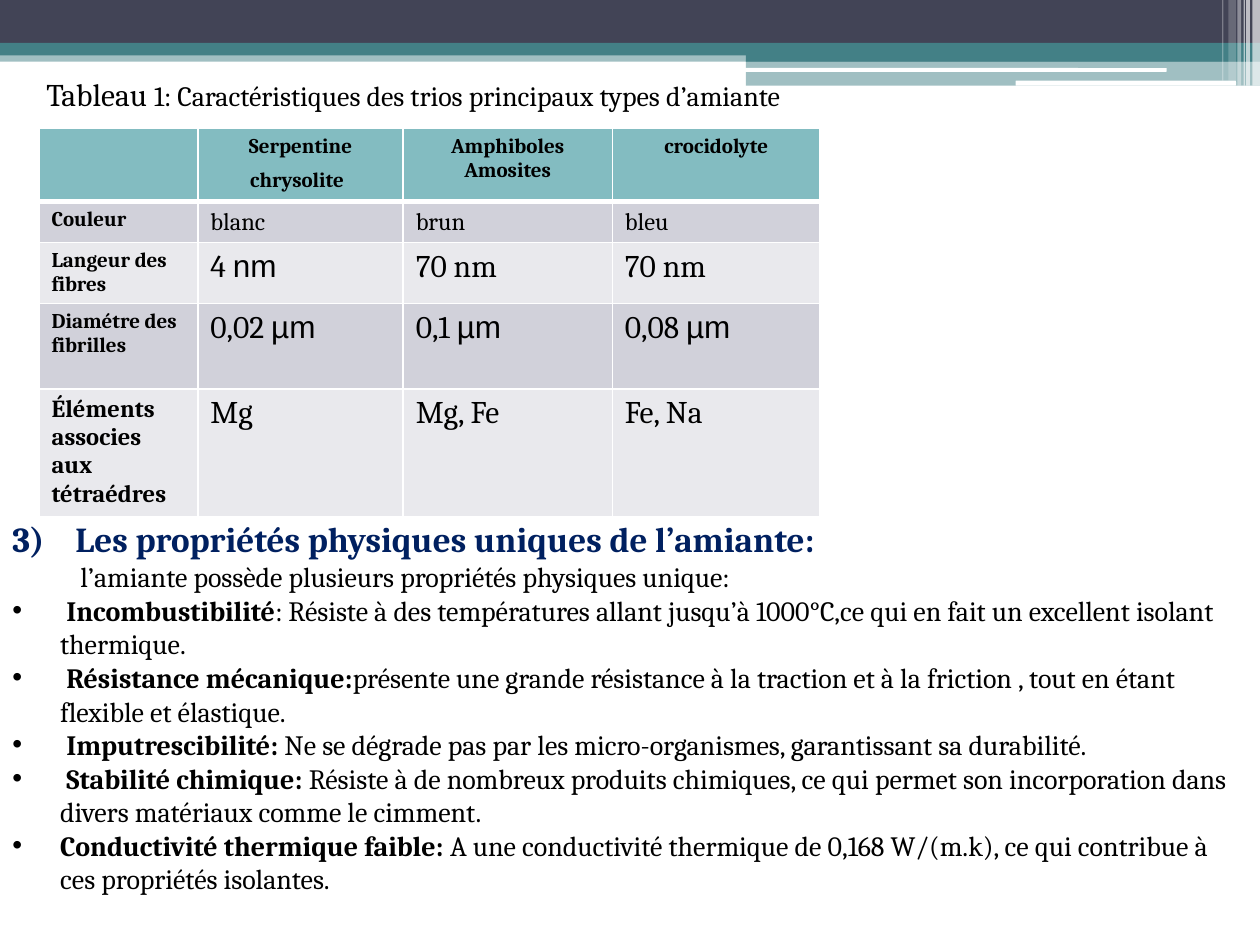
import pptx
import pptx.util
import pptx.dml.color
import pptx.enum.shapes
import pptx.enum.text
import pptx.oxml.ns
import lxml.etree

Inches, Pt = pptx.util.Inches, pptx.util.Pt
ALIGN = pptx.enum.text.PP_ALIGN
WHITE, BLACK, NAVY, SLATE, TEAL = "FFFFFF", "000000", "002060", "424456", "438086"
HEADER, BAND_DARK, BAND_LIGHT = "83BCC1", "D1D1DA", "E9E9ED"

BANNER = [
    (0, 0.4, 10, 0.09, TEAL, 50),
    (0, 0, 10, 0.34, SLATE, 100),
    (0, 0.34, 10, 0.1, TEAL, 100),
    (5.92, 0.39, 4.08, 0.1, TEAL, 100),
    (5.92, 0.48, 4.08, 0.2, TEAL, 50),
]
ROUNDED_LINES = [(5.91, 0.54, 3.35, 0.03, WHITE, 100), (8.06, 0.64, 1.75, 0.04, WHITE, 100)]
STRIPES = [
    (9.94, 0, 0.06, 0.68, WHITE, 65),
    (9.89, 0, 0.03, 0.68, WHITE, 65),
    (9.87, 0, 0.01, 0.68, WHITE, 60),
    (9.82, 0, 0.03, 0.68, WHITE, 40),
    (9.75, 0, 0.06, 0.64, WHITE, 20),
    (9.7, 0, 0.01, 0.64, WHITE, 30),
]

COLUMN_WIDTHS = [1.26, 1.63, 1.66, 1.65]
ROW_HEIGHTS = [0.58, 0.32, 0.48, 0.68, 1.01]
TABLE_ROWS = [
    (12, 12, ["", "Serpentine chrysolite", "Amphiboles Amosites", "crocidolyte"]),
    (12, 14, ["Couleur", "blanc", "brun", "bleu"]),
    (12, 18, ["Langeur des fibres", ("4 ", "nm"), "70 nm", "70 nm"]),
    (12, 18, ["Diamétre des fibrilles", ("0,02 ", "µm"), ("0,1 ", "µm"), ("0,08 ", "µm")]),
    (14, 18, ["Éléments associes aux tétraédres", "Mg", "Mg, Fe", "Fe, Na"]),
]

PROPERTIES = [
    (" Incombustibilité", ": Résiste à des températures allant jusqu’à 1000°C,ce qui en fait un "
     "excellent isolant thermique."),
    (" Résistance mécanique:", "présente une grande résistance à la traction et à la friction , "
     "tout en étant flexible et élastique."),
    (" Imputrescibilité:", " Ne se dégrade pas par les micro-organismes, garantissant sa durabilité."),
    (" Stabilité chimique: ", "Résiste à de nombreux produits chimiques, ce qui permet son "
     "incorporation dans divers matériaux comme le cimment."),
    ("Conductivité thermique faible: ", "A une conductivité thermique de 0,168 W/(m.k), "
     "ce qui contribue à ces propriétés isolantes."),
]


def rgb(color):
    """Turn a hex string into a colour."""
    return pptx.dml.color.RGBColor.from_string(color)


def sub(parent, tag, **attrs):
    """Append a DrawingML element to a parent."""
    el = lxml.etree.SubElement(parent, pptx.oxml.ns.qn(tag))
    for name, value in attrs.items():
        el.set(name, str(value))
    return el


def add_run(p, text, size, bold=False, color=BLACK, font="Cambria"):
    """Add one formatted run to a paragraph."""
    r = p.add_run()
    r.text = text
    r.font.size, r.font.bold, r.font.name = Pt(size), bold, font
    r.font.color.rgb = rgb(color)


def set_indent(p, left, first=0):
    """Set the left margin and first-line indent of a paragraph in inches."""
    pPr = p._p.get_or_add_pPr()
    pPr.set("marL", str(Inches(left)))
    pPr.set("indent", str(Inches(first)))
    return pPr


def add_bar(slide, left, top, width, height, color, alpha, kind):
    """Draw a flat bar with a given opacity in percent."""
    sp = slide.shapes.add_shape(kind, Inches(left), Inches(top), Inches(width), Inches(height))
    sp.shadow.inherit = False
    sp.line.fill.background()
    sp.fill.solid()
    sp.fill.fore_color.rgb = rgb(color)
    if alpha < 100:
        clr = sp._element.spPr.find(".//" + pptx.oxml.ns.qn("a:srgbClr"))
        sub(clr, "a:alpha", val=alpha * 1000)


def add_banner(slide, left, top):
    """Draw the decorative banner from its top-left corner."""
    shapes = pptx.enum.shapes.MSO_SHAPE
    groups = [(BANNER, shapes.RECTANGLE), (ROUNDED_LINES, shapes.ROUNDED_RECTANGLE),
              (STRIPES, shapes.RECTANGLE)]
    for bars, kind in groups:
        for x, y, w, h, color, alpha in bars:
            add_bar(slide, left + x, top + y, w, h, color, alpha, kind)


def add_text_frame(slide, left, top, width, height):
    """Add a wrapping text box and return its frame."""
    box = slide.shapes.add_textbox(Inches(left), Inches(top), Inches(width), Inches(height))
    tf = box.text_frame
    tf.word_wrap = True
    tf.auto_size = pptx.enum.text.MSO_AUTO_SIZE.SHAPE_TO_FIT_TEXT
    return tf


def style_cell(cell, fill, top, bottom):
    """Give a cell white borders and a solid fill."""
    tcPr = cell._tc.get_or_add_tcPr()
    for side, width in zip("LRTB", (1, 1, top, bottom)):
        ln = sub(tcPr, "a:ln" + side, w=Pt(width))
        sub(sub(ln, "a:solidFill"), "a:srgbClr", val=WHITE)
    cell.fill.solid()
    cell.fill.fore_color.rgb = rgb(fill)


def add_fibre_table(slide, left, top):
    """Add the table comparing the asbestos types."""
    frame = slide.shapes.add_table(
        len(ROW_HEIGHTS), len(COLUMN_WIDTHS), Inches(left), Inches(top),
        Inches(sum(COLUMN_WIDTHS)), Inches(sum(ROW_HEIGHTS)))
    table = frame.table
    table.horz_banding = False
    for column, width in zip(table.columns, COLUMN_WIDTHS):
        column.width = Inches(width)
    for i, (label_size, value_size, values) in enumerate(TABLE_ROWS):
        table.rows[i].height = Inches(ROW_HEIGHTS[i])
        fill = HEADER if i == 0 else BAND_DARK if i % 2 else BAND_LIGHT
        for j, value in enumerate(values):
            cell = table.cell(i, j)
            style_cell(cell, fill, 3 if i == 1 else 1, 3 if i == 0 else 1)
            p = cell.text_frame.paragraphs[0]
            p.alignment = ALIGN.CENTER if i == 0 else ALIGN.LEFT
            parts = (value,) if isinstance(value, str) else value
            for text, font in zip(parts, ("Cambria", "Arial")):
                if text:
                    add_run(p, text, value_size if j else label_size, i == 0 or j == 0, font=font)
    add_run(table.cell(0, 1).text_frame.paragraphs[0], " ", 18, True, WHITE)


def add_caption(slide, left, top, width, height):
    """Add the table caption."""
    p = add_text_frame(slide, left, top, width, height).paragraphs[0]
    set_indent(p, 0.5)
    add_run(p, "Tableau ", 18)
    add_run(p, "1: Caractéristiques des trios principaux types d’amiante", 16)


def add_properties(slide, left, top, width, height):
    """Add the numbered heading and the bulleted properties."""
    tf = add_text_frame(slide, left, top, width, height)
    p = tf.paragraphs[0]
    sub(set_indent(p, 0.5, -0.5), "a:buAutoNum", type="arabicParenR", startAt=3)
    add_run(p, "Les propriétés physiques uniques de l’amiante:", 20, True, NAVY)
    p = tf.add_paragraph()
    set_indent(p, 0.54)
    add_run(p, "l’amiante possède plusieurs propriétés physiques unique:", 16)
    for name, description in PROPERTIES:
        p = tf.add_paragraph()
        pPr = set_indent(p, 0.38, -0.38)
        sub(pPr, "a:buFont", typeface="Arial")
        sub(pPr, "a:buChar", char="•")
        add_run(p, name, 16, True)
        add_run(p, description, 16)


def main():
    """Build and save the presentation."""
    prs = pptx.Presentation()
    prs.slide_width, prs.slide_height = Inches(10), Inches(7.5)
    slide = prs.slides.add_slide(prs.slide_layouts[6])
    add_banner(slide, 0, 0)
    add_fibre_table(slide, 0.31, 1.02)
    add_caption(slide, -0.23, 0.55, 7.66, 0.4)
    add_properties(slide, 0, 4.06, 10, 3.4)
    prs.save("out.pptx")


if __name__ == "__main__":
    main()
